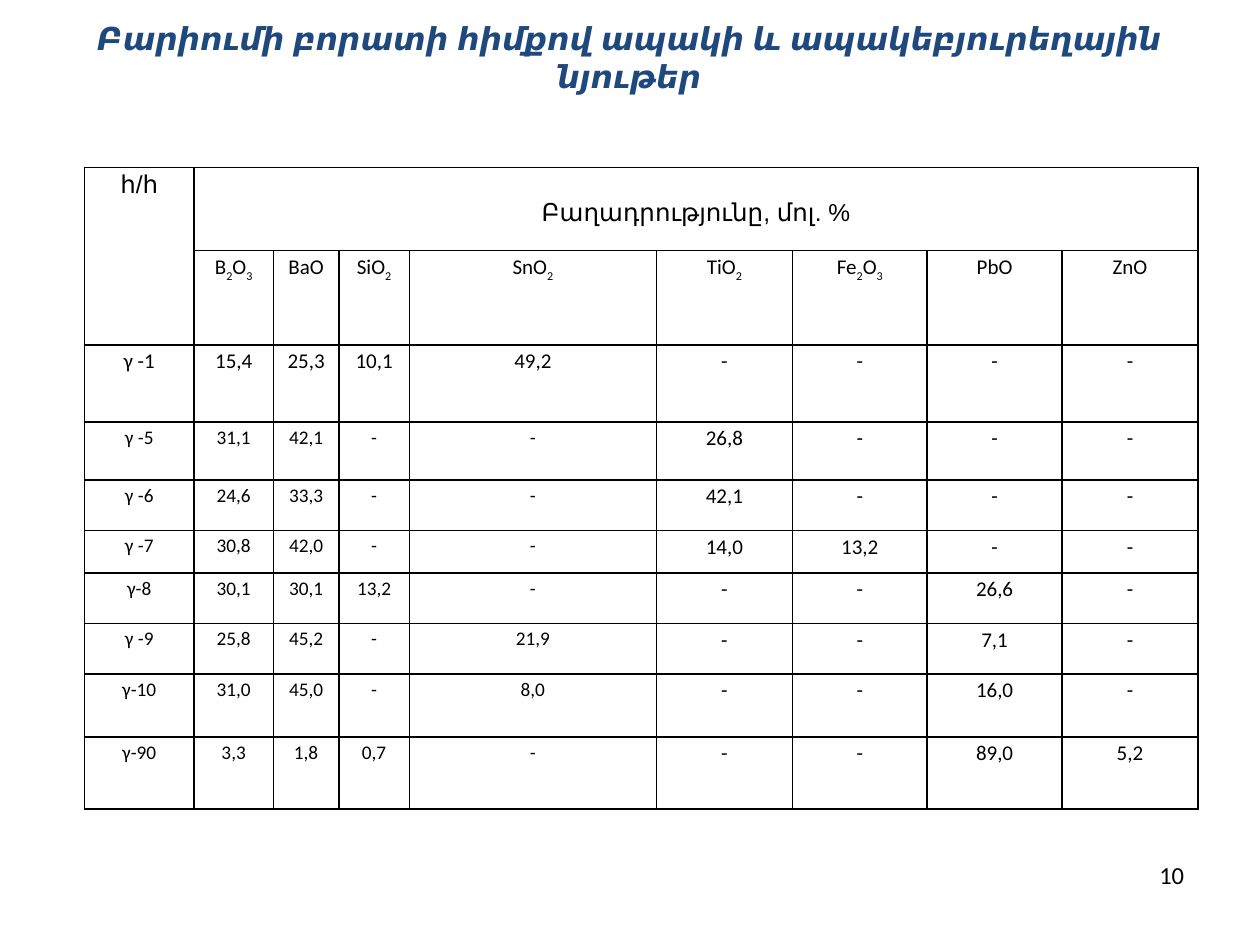
from itertools import groupby

from lxml import etree
from pptx import Presentation
from pptx import util as u
from pptx.dml.color import RGBColor
from pptx.enum import shapes, text
from pptx.oxml.ns import qn

COLUMNS = [0.87, 0.63, 0.52, 0.56, 1.96, 1.08, 1.07, 1.07, 1.08]
ROWS = [0.66, 0.75, 0.33, 0.28, 0.46, 0.4, 0.34, 0.4, 0.4, 0.5, 0.57]
OXIDES = ["B2O3", "BaO", "SiO2", "SnO2", "TiO2", "Fe2O3", "PbO", "ZnO"]
FIRST_GLASS = ["γ -1", "15,4", "25,3", "10,1", "49,2", "-", "-", "-", "-"]
GLASSES = [
    ["γ -5", "31,1", "42,1", "-", "-", "26,8", "-", "-", "-"],
    ["γ -6", "24,6", "33,3", "-", "-", "42,1", "-", "-", "-"],
    ["γ -7", "30,8", "42,0", "-", "-", "14,0", "13,2", "-", "-"],
    ["γ-8", "30,1", "30,1", "13,2", "-", "-", "-", "26,6", "-"],
    ["γ -9", "25,8", "45,2", "-", "21,9", "-", "-", "7,1", "-"],
    ["γ-10", "31,0", "45,0", "-", "8,0", "-", "-", "16,0", "-"],
    ["γ-90", "3,3", "1,8", "0,7", "-", "-", "-", "89,0", "5,2"],
]


def color(value):
    return RGBColor.from_string(value)


class SlideBuilder:
    HEAD_FONT, BODY_FONT = "Arial", "Calibri"
    INK, ACCENT, PAPER = "000000", "1F497D", "FFFFFF"

    def __init__(self, slide):
        self.slide = slide

    def add_span(self, para, words, size, font, ink=INK):
        span = para.add_run()
        span.text = words
        span.font.size = u.Pt(size)
        span.font.name = font
        span.font.color.rgb = color(ink)
        return span

    def place_title(self, words, left, top, width, height):
        title = self.slide.shapes.title
        title.left, title.top = u.Inches(left), u.Inches(top)
        title.width, title.height = u.Inches(width), u.Inches(height)
        frame = title.text_frame
        frame.word_wrap = True
        frame.auto_size = text.MSO_AUTO_SIZE.NONE
        frame.vertical_anchor = text.MSO_ANCHOR.MIDDLE
        para = frame.paragraphs[0]
        para.alignment = text.PP_ALIGN.CENTER
        span = self.add_span(para, words, 18, self.HEAD_FONT, self.ACCENT)
        span.font.bold = span.font.italic = True

    def add_table(self, left, top, columns, rows):
        frame = self.slide.shapes.add_table(
            len(rows), len(columns), u.Inches(left), u.Inches(top),
            u.Inches(sum(columns)), u.Inches(sum(rows)))
        table = frame.table
        table.first_row = table.horz_banding = False
        for column, width in zip(table.columns, columns):
            column.width = u.Inches(width)
        for row, height in zip(table.rows, rows):
            row.height = u.Inches(height)
        return table

    def style_cell(self, cell, open_side=None):
        """Draw thin black borders, leaving out the open side."""
        props = cell._tc.get_or_add_tcPr()
        for side in "LRTB":
            line = etree.SubElement(props, qn(f"a:ln{side}"), w=str(u.Pt(1)))
            if side == open_side:
                etree.SubElement(line, qn("a:noFill"))
            else:
                fill = etree.SubElement(line, qn("a:solidFill"))
                etree.SubElement(fill, qn("a:srgbClr"), val=self.INK)
        cell.fill.background()

    def fill_cell(self, cell, words, size, font=BODY_FONT, inset=0.05,
                  top=0, formula=False):
        cell.margin_left = cell.margin_right = u.Inches(inset)
        cell.margin_top, cell.margin_bottom = u.Inches(top), 0
        para = cell.text_frame.paragraphs[0]
        para.alignment = text.PP_ALIGN.CENTER
        para.line_spacing = 1.15
        para.space_after = u.Pt(8)
        if not formula:
            self.add_span(para, words, size, font)
            return
        # Digits in a formula are subscripts
        for is_digit, letters in groupby(words, str.isdigit):
            span = self.add_span(para, "".join(letters), size, font)
            if is_digit:
                span._r.get_or_add_rPr().set("baseline", "-25000")

    def add_page_number(self, number, left, top, width, height):
        box = self.slide.shapes.add_shape(
            shapes.MSO_SHAPE.RECTANGLE, u.Inches(left), u.Inches(top),
            u.Inches(width), u.Inches(height))
        box.shadow.inherit = False
        box.fill.solid()
        box.fill.fore_color.rgb = color(self.PAPER)
        box.line.fill.background()
        box.text_frame.vertical_anchor = text.MSO_ANCHOR.MIDDLE
        para = box.text_frame.paragraphs[0]
        para.alignment = text.PP_ALIGN.CENTER
        self.add_span(para, number, 14, self.BODY_FONT)


def main():
    deck = Presentation()
    deck.slide_width, deck.slide_height = u.Inches(10), u.Inches(7.5)
    page = SlideBuilder(deck.slides.add_slide(deck.slide_layouts[5]))

    # Title
    page.place_title(
        "Բարիումի բորատի հիմքով ապակի և ապակեբյուրեղային նյութեր",
        0.31, 0.25, 9.37, 0.41)

    # Table grid: the first glass takes rows 2 and 3, with no line between
    table = page.add_table(0.67, 1.33, COLUMNS, ROWS)
    open_sides = {2: "B", 3: "T"}
    for row in range(len(ROWS)):
        for column in range(len(COLUMNS)):
            page.style_cell(table.cell(row, column), open_sides.get(row))

    # Header
    table.cell(0, 0).merge(table.cell(1, 0))
    table.cell(0, 1).merge(table.cell(0, 8))
    page.fill_cell(table.cell(0, 0), "հ/հ", 14, page.HEAD_FONT)
    page.fill_cell(table.cell(0, 1), "Բաղադրությունը, մոլ. %", 14,
                   page.HEAD_FONT, top=0.22)
    for column, oxide in enumerate(OXIDES, start=1):
        page.fill_cell(table.cell(1, column), oxide, 12, formula=True)

    # First glass, with the small empty row below it
    for column, value in enumerate(FIRST_GLASS):
        page.fill_cell(table.cell(2, column), value, 12, inset=0)
        spare = table.cell(3, column)
        spare.margin_top = spare.margin_bottom = 0
        end = spare.text_frame.paragraphs[0]._p.get_or_add_endParaRPr()
        end.set("sz", "1100")

    # Other glasses
    for row, glass in enumerate(GLASSES, start=4):
        for column, value in enumerate(glass):
            page.fill_cell(table.cell(row, column), value,
                           11 if column < 5 else 12)

    # Page number
    page.add_page_number("10", 8.92, 6.82, 0.76, 0.25)
    deck.save("out.pptx")


if __name__ == "__main__":
    main()
